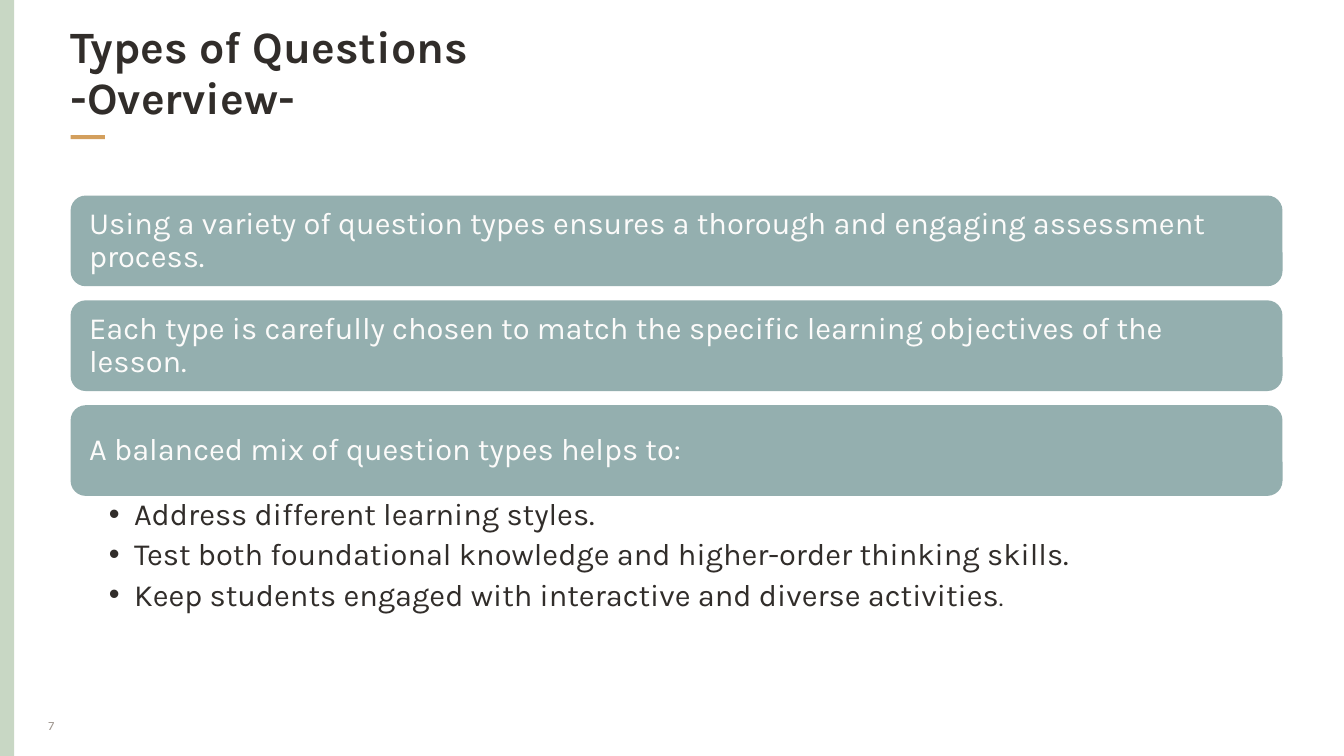
"""Builds the slide that gives an overview of question types."""
from dataclasses import dataclass

from copy import deepcopy
from lxml import etree
from pptx import Presentation
from pptx.dml.color import RGBColor
from pptx.enum.shapes import MSO_SHAPE
from pptx.enum.text import MSO_ANCHOR, MSO_AUTO_SIZE, PP_ALIGN
from pptx.oxml.ns import qn
from pptx.util import Inches, Pt

RECT, ROUND = MSO_SHAPE.RECTANGLE, MSO_SHAPE.ROUNDED_RECTANGLE
TOP, MIDDLE = MSO_ANCHOR.TOP, MSO_ANCHOR.MIDDLE
LEFT, CENTER = PP_ALIGN.LEFT, PP_ALIGN.CENTER
FIXED = MSO_AUTO_SIZE.NONE


@dataclass
class Theme:
    font: str = "Karla"
    dark: str = "312D2A"
    light: str = "FCFBFA"
    muted: str = "9E958E"
    edge: str = "C8D7C4"
    accent: str = "D39F5D"
    band: str = "94AFAF"
    title: int = 32
    body: int = 22
    stop: int = 18
    small: int = 9


def write(para, text, size, color, font, bold=False, align=LEFT, line=1.0, after=0):
    para.text = text
    para.alignment = align
    para.line_spacing = line
    para.space_before, para.space_after = Pt(0), Pt(after)
    for run in para.runs:
        run.font.name, run.font.size, run.font.bold = font, Pt(size), bold
        run.font.color.rgb = RGBColor.from_string(color)
    for gap in para._p.findall(qn("a:br")):
        gap.insert(0, deepcopy(para.runs[0]._r.find(qn("a:rPr"))))


class Deck:
    def __init__(self, theme):
        self.theme = theme
        self.file = Presentation()
        self.file.slide_width, self.file.slide_height = Inches(13.33), Inches(7.5)
        self.slide = self.file.slides.add_slide(self.file.slide_layouts[1])

    def frame(self, shape, pad=(0, 0, 0, 0), anchor=MIDDLE):
        frame = shape.text_frame
        frame.word_wrap, frame.auto_size = True, FIXED
        frame.vertical_anchor = anchor
        frame.margin_left, frame.margin_top, frame.margin_right, frame.margin_bottom = map(Inches, pad)
        return frame

    def place(self, shape, box):
        shape.left, shape.top, shape.width, shape.height = map(Inches, box)

    def block(self, kind, box, color):
        shape = self.slide.shapes.add_shape(kind, *map(Inches, box))
        shape.shadow.inherit = False
        shape.fill.solid()
        shape.fill.fore_color.rgb = RGBColor.from_string(color)
        shape.line.fill.background()
        return shape

    def title(self, text, box):
        look, shape = self.theme, self.slide.shapes.title
        self.place(shape, box)
        write(self.frame(shape).paragraphs[0], text, look.title, look.dark, look.font, bold=True, line=0.95)

    def band(self, text, box):
        look = self.theme
        frame = self.frame(self.block(ROUND, box, look.band), (0.14, 0.14, 0.14, 0.14))
        write(frame.paragraphs[0], text, look.body, look.light, look.font, line=0.9)

    def bullets(self, items, box):
        look, shape = self.theme, self.slide.placeholders[1]
        self.place(shape, box)
        frame = self.frame(shape, (0.38, 0.03, 0.17, 0.03), TOP)
        for num, item in enumerate(items):
            para = frame.add_paragraph() if num else frame.paragraphs[0]
            para.level = 1
            props = para._p.get_or_add_pPr()
            props.set("marL", str(Inches(0.25)))
            props.set("indent", str(Inches(-0.25)))
            etree.SubElement(props, qn("a:buFont")).set("typeface", "Arial")
            etree.SubElement(props, qn("a:buChar")).set("char", "•")
            write(para, item, look.body, look.dark, look.font, line=0.9, after=5)
        stop = deepcopy(para.runs[0]._r)
        para._p.append(stop)
        para.runs[0].text = item[:-1]
        para.runs[1].text = item[-1]
        para.runs[1].font.size = Pt(look.stop)

    def number(self, text, box):
        look = self.theme
        shape = self.slide.shapes.add_textbox(*map(Inches, box))
        write(self.frame(shape).paragraphs[0], text, look.small, look.muted, look.font, align=CENTER)


def main():
    look = Theme()
    deck = Deck(look)
    left, wide, high, top, step = 0.7, 12.02, 0.9, 1.94, 1.04
    deck.block(RECT, (0, 0, 0.14, 7.5), look.edge)
    deck.block(RECT, (left, 1.34, 0.34, 0.04), look.accent)
    deck.number("7", (0.31, 7, 0.4, 0.4))
    deck.title("Types of Questions\v-Overview-", (left, 0.28, wide, high))
    bands = [
        "Using a variety of question types ensures a thorough and engaging assessment process.",
        "Each type is carefully chosen to match the specific learning objectives of the lesson.",
        "A balanced mix of question types helps to:",
    ]
    for row, text in enumerate(bands):
        deck.band(text, (left, top + row * step, wide, high))
    deck.bullets([
        "Address different learning styles.",
        "Test both foundational knowledge and higher-order thinking skills.",
        "Keep students engaged with interactive and diverse activities.",
    ], (left, 4.92, wide, 1.22))
    deck.file.save("out.pptx")


if __name__ == "__main__":
    main()
